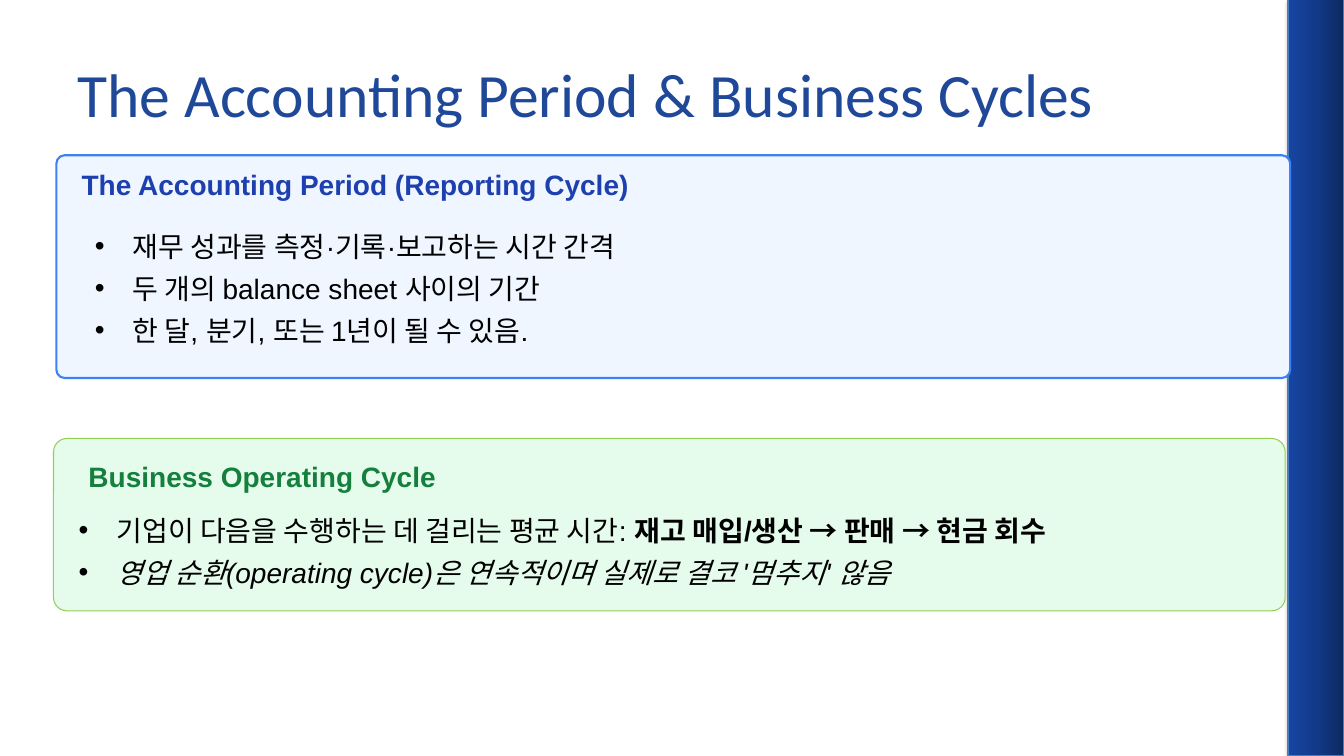
from copy import deepcopy
from dataclasses import dataclass

from lxml.etree import SubElement
from pptx import Presentation
from pptx.dml.color import RGBColor
from pptx.enum.shapes import MSO_SHAPE
from pptx.enum.text import MSO_ANCHOR, MSO_AUTO_SIZE, PP_ALIGN
from pptx.oxml.ns import qn
from pptx.util import Pt

COLORS = {
    "title": "1F4899",
    "text": "000000",
    "blue_fill": "EFF6FF",
    "blue_line": "3B82F6",
    "blue_heading": "1E40AF",
    "green_fill": "E5FCED",
    "green_line": "92D050",
    "green_heading": "15803D",
    "band_line": "4B7EBC",
    "band_dark": "0D2960",
    "band_middle": "123A89",
    "band_light": "1645A2",
    "shadow": "000000",
}
TEXT_WIDTH = 861
BULLET_INDENT = 27


@dataclass(frozen=True)
class Area:
    left: float
    top: float
    width: float
    height: float

    def lengths(self) -> tuple:
        return Pt(self.left), Pt(self.top), Pt(self.width), Pt(self.height)


@dataclass(frozen=True)
class Span:
    text: str
    bold: bool = False
    italic: bool = False


@dataclass(frozen=True)
class Section:
    theme: str
    card: Area
    corner: float
    line_width: float
    heading: str
    heading_area: Area
    heading_spacing: float
    list_area: Area
    items: tuple


SECTIONS = (
    Section(
        "blue", Area(40.3, 110.9, 881.3, 159.1), 0.037, 1.5,
        "The Accounting Period (Reporting Cycle)",
        Area(58.3, 119.5, TEXT_WIDTH, 39.6), 23.8,
        Area(67.7, 157.7, TEXT_WIDTH, 83.5),
        (
            (Span("재무 성과를 측정·기록·보고하는 시간 간격"),),
            (Span("두 개의 balance sheet 사이의 기간"),),
            (Span("한 달, 분기, 또는 1년이 될 수 있음."),),
        ),
    ),
    Section(
        "green", Area(38.2, 313.2, 879.8, 123.1), 0.078, 0.75,
        "Business Operating Cycle",
        Area(63.2, 329.8, TEXT_WIDTH, 22.3), 22.4,
        Area(56.2, 360.7, TEXT_WIDTH, 75.6),
        (
            (
                Span("기업이 다음을 수행하는 데 걸리는 평균 시간: "),
                Span("재고 매입/생산 → 판매 → 현금 회수", bold=True),
            ),
            (Span("영업 순환(operating cycle)은 연속적이며 실제로 결코 '멈추지' 않음", italic=True),),
        ),
    ),
)


def color(name: str) -> RGBColor:
    return RGBColor.from_string(COLORS[name])


def place(shape, area: Area) -> None:
    shape.left, shape.top, shape.width, shape.height = area.lengths()


def add_span(paragraph, span: Span, color_name: str, size: float = 20, font: str = "Arial") -> None:
    run = paragraph.add_run()
    run.text = span.text
    run.font.name = font
    run.font.size = Pt(size)
    run.font.bold = span.bold
    run.font.italic = span.italic
    run.font.color.rgb = color(color_name)


def prepare_frame(box) -> None:
    """Wrap the text from the top of the box, without margins or fitting."""
    frame = box.text_frame
    frame.word_wrap = True
    frame.auto_size = MSO_AUTO_SIZE.NONE
    frame.vertical_anchor = MSO_ANCHOR.TOP
    frame.margin_left = frame.margin_top = frame.margin_right = frame.margin_bottom = 0


def set_bullet(paragraph) -> None:
    properties = paragraph._p.get_or_add_pPr()
    properties.set("marL", str(Pt(BULLET_INDENT)))
    properties.set("indent", str(-Pt(BULLET_INDENT)))
    SubElement(properties, qn("a:buFont"), typeface="Arial")
    SubElement(properties, qn("a:buChar"), char="•")


def add_band(page) -> None:
    """Draw the shaded band along the right edge."""
    band = page.shapes.add_shape(MSO_SHAPE.RECTANGLE, *Area(920, 0, 40, 540).lengths())
    band.fill.gradient()
    band.fill.gradient_angle = 180
    first, last = band.element.iter(qn("a:gs"))
    first.addnext(deepcopy(first))
    names = ("band_dark", "band_middle", "band_light")
    for stop, name, position in zip(band.fill.gradient_stops, names, (0, 0.5, 1)):
        stop.position = position
        stop.color.rgb = color(name)
    band.line.color.rgb = color("band_line")
    band.line.width = Pt(0.75)
    band.shadow.inherit = False
    effects = next(band.element.iter(qn("a:effectLst")))
    shadow = SubElement(effects, qn("a:outerShdw"), blurRad=str(Pt(3.1)),
                        dist=str(Pt(1.8)), dir="5400000", rotWithShape="0")
    shade = SubElement(shadow, qn("a:srgbClr"), val=COLORS["shadow"])
    SubElement(shade, qn("a:alpha"), val="35000")


def add_card(page, section: Section) -> None:
    card = page.shapes.add_shape(MSO_SHAPE.ROUNDED_RECTANGLE, *section.card.lengths())
    card.adjustments[0] = section.corner
    card.fill.solid()
    card.fill.fore_color.rgb = color(section.theme + "_fill")
    card.line.color.rgb = color(section.theme + "_line")
    card.line.width = Pt(section.line_width)
    card.shadow.inherit = False


def add_heading(page, section: Section) -> None:
    box = page.shapes.add_textbox(*section.heading_area.lengths())
    prepare_frame(box)
    paragraph = box.text_frame.paragraphs[0]
    paragraph.line_spacing = Pt(section.heading_spacing)
    add_span(paragraph, Span(section.heading, bold=True), section.theme + "_heading")


def fill_list(body, section: Section) -> None:
    place(body, section.list_area)
    prepare_frame(body)
    frame = body.text_frame
    for index, spans in enumerate(section.items):
        paragraph = frame.add_paragraph() if index else frame.paragraphs[0]
        set_bullet(paragraph)
        paragraph.line_spacing = Pt(30)
        paragraph.space_before = Pt(0)
        for span in spans:
            add_span(paragraph, span, "text")


def fill_title(title) -> None:
    place(title, Area(48.2, 21.6, 864, 90))
    title.text_frame.vertical_anchor = MSO_ANCHOR.MIDDLE
    paragraph = title.text_frame.paragraphs[0]
    paragraph.alignment = PP_ALIGN.LEFT
    add_span(paragraph, Span("The Accounting Period & Business Cycles"), "title", 44, "Calibri")


def main() -> None:
    deck = Presentation()
    deck.slide_width, deck.slide_height = Pt(960), Pt(540)
    page = deck.slides.add_slide(deck.slide_layouts.get_by_name("Two Content"))
    title, *bodies = page.placeholders
    add_band(page)
    for section in reversed(SECTIONS):
        add_card(page, section)
    # Bring the placeholders in front of the band and cards.
    for holder in (title, *bodies):
        holder.element.getparent().append(holder.element)
    fill_title(title)
    for section, body in zip(SECTIONS, bodies[:2]):
        add_heading(page, section)
        fill_list(body, section)
    deck.save("out.pptx")


if __name__ == "__main__":
    main()
